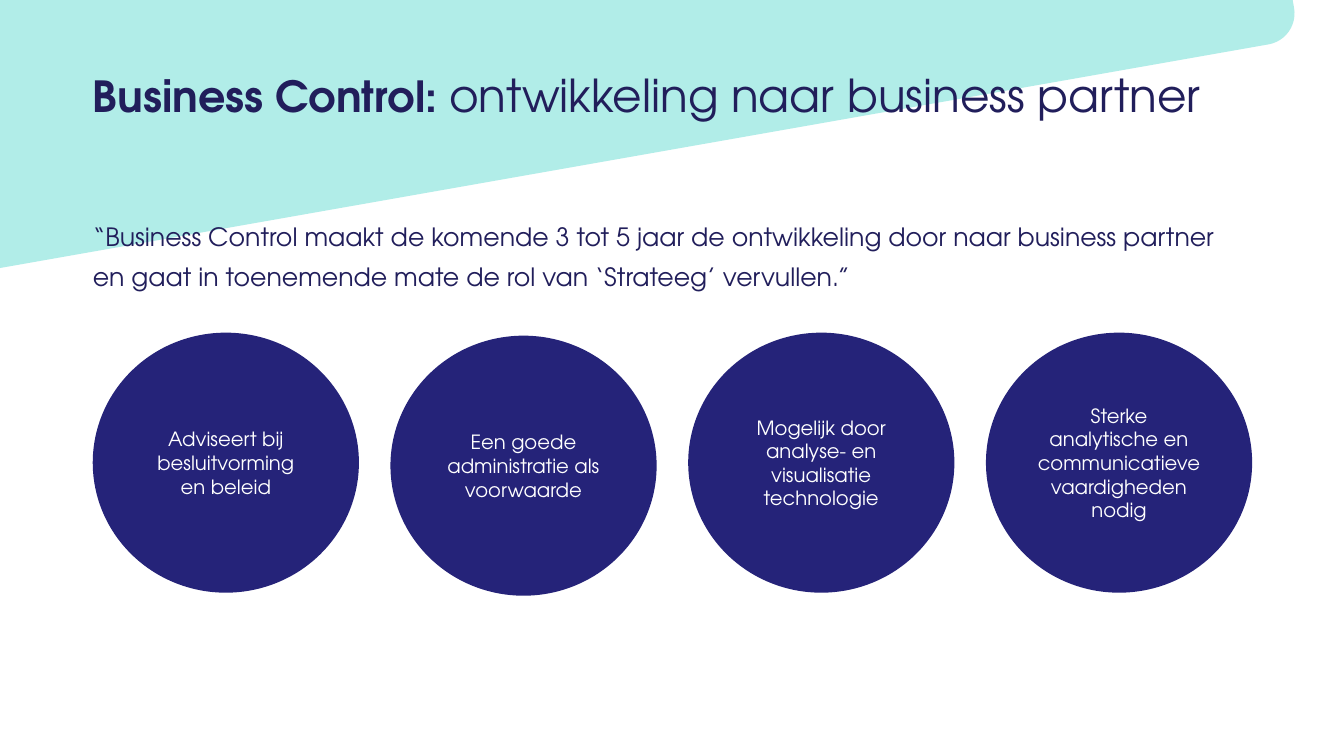
from copy import deepcopy

from pptx import Presentation
from pptx.dml.color import RGBColor
from pptx.enum.shapes import MSO_SHAPE
from pptx.enum.text import MSO_ANCHOR, MSO_AUTO_SIZE, PP_ALIGN
from pptx.oxml.ns import qn
from pptx.util import Inches, Pt

ROUNDED, ELLIPSE = MSO_SHAPE.ROUNDED_RECTANGLE, MSO_SHAPE.OVAL
TOP, MIDDLE = MSO_ANCHOR.TOP, MSO_ANCHOR.MIDDLE
LEFT, CENTER = PP_ALIGN.LEFT, PP_ALIGN.CENTER
NO_AUTOFIT = MSO_AUTO_SIZE.NONE

FONT = "TeX Gyre Adventor"
COLORS = {"band": "B1EDE8", "ink": "211E5B", "circle": "252379", "white": "FFFFFF"}

TITLE = [("Business Control: ", 30.6, True),
         ("ontwikkeling naar business partner", 32.4, False)]
QUOTE = ("“Business Control maakt de komende 3 tot 5 jaar de ontwikkeling door naar "
         "business partner en gaat in toenemende mate de rol van ‘Strateeg’ vervullen.”")
# Per circle: top, then paragraphs; \n is a line break within a paragraph
CIRCLES = [
    (3.3, ["Adviseert bij besluitvorming\nen beleid"]),
    (3.33, ["Een goede\nadministratie als voorwaarde"]),
    (3.3, ["Mogelijk door\nanalyse- en\nvisualisatie\ntechnologie"]),
    (3.3, ["Sterke\nanalytische en communicatieve vaardigheden", "nodig"]),
]
MARGIN, TEXT_WIDTH = 0.92, 11.25
CIRCLE_WIDTH, CIRCLE_HEIGHT, CIRCLE_PITCH = 2.64, 2.58, 2.953


def color(name):
    return RGBColor.from_string(COLORS[name])


def format_run(run, size, color_name, bold=False):
    for name, value in {"name": FONT, "size": Pt(size), "bold": bold}.items():
        setattr(run.font, name, value)
    run.font.color.rgb = color(color_name)


def format_frame(frame, anchor):
    settings = {"word_wrap": True, "auto_size": NO_AUTOFIT, "vertical_anchor": anchor}
    if anchor == TOP:
        settings.update(dict.fromkeys(
            ("margin_left", "margin_top", "margin_right", "margin_bottom"), 0))
    for name, value in settings.items():
        setattr(frame, name, value)


def add_filled_shape(slide, kind, box, color_name):
    shape = slide.shapes.add_shape(kind, *map(Inches, box))
    shape.shadow.inherit = False
    shape.fill.solid()
    shape.fill.fore_color.rgb = color(color_name)
    shape.line.fill.background()
    return shape


def fill_paragraph(paragraph, text, size, color_name, alignment):
    """Write the text and give its line breaks the same size as its runs."""
    paragraph.text = text
    paragraph.alignment = alignment
    for run in paragraph.runs:
        format_run(run, size, color_name)
    for line_break in paragraph._p.findall(qn("a:br")):
        line_break.append(deepcopy(paragraph.runs[0]._r.rPr))


def add_title(slide):
    title = slide.shapes.title
    box = {"left": MARGIN, "top": 0.67, "width": TEXT_WIDTH, "height": 1.32}
    for name, value in box.items():
        setattr(title, name, Inches(value))
    format_frame(title.text_frame, TOP)
    paragraph = title.text_frame.paragraphs[0]
    paragraph.alignment = LEFT
    for text, size, bold in TITLE:
        run = paragraph.add_run()
        run.text = text
        format_run(run, size, "ink", bold)


def add_band(slide):
    band = add_filled_shape(slide, ROUNDED, (-0.75, -1.09, 13.51, 2.67), "band")
    band.adjustments[0] = 0.117
    band.rotation = 350
    slide.shapes.title.element.addprevious(band.element)  # behind the title


def add_quote(slide):
    box = slide.shapes.add_textbox(*map(Inches, (MARGIN, 2.11, TEXT_WIDTH, 1.0)))
    format_frame(box.text_frame, TOP)
    paragraph = box.text_frame.paragraphs[0]
    paragraph.line_spacing = 1.3
    fill_paragraph(paragraph, QUOTE, 18, "ink", LEFT)


def add_circles(slide):
    for index, (top, texts) in enumerate(CIRCLES):
        box = (MARGIN + index * CIRCLE_PITCH, top, CIRCLE_WIDTH, CIRCLE_HEIGHT)
        frame = add_filled_shape(slide, ELLIPSE, box, "circle").text_frame
        format_frame(frame, MIDDLE)
        for number, text in enumerate(texts):
            paragraph = frame.add_paragraph() if number else frame.paragraphs[0]
            fill_paragraph(paragraph, text, 14, "white", CENTER)


def main():
    presentation = Presentation()
    presentation.slide_width = Inches(13.33)
    presentation.slide_height = Inches(7.5)
    slide = presentation.slides.add_slide(presentation.slide_layouts[5])
    add_title(slide)
    add_band(slide)
    add_quote(slide)
    add_circles(slide)
    presentation.save("out.pptx")


if __name__ == "__main__":
    main()
